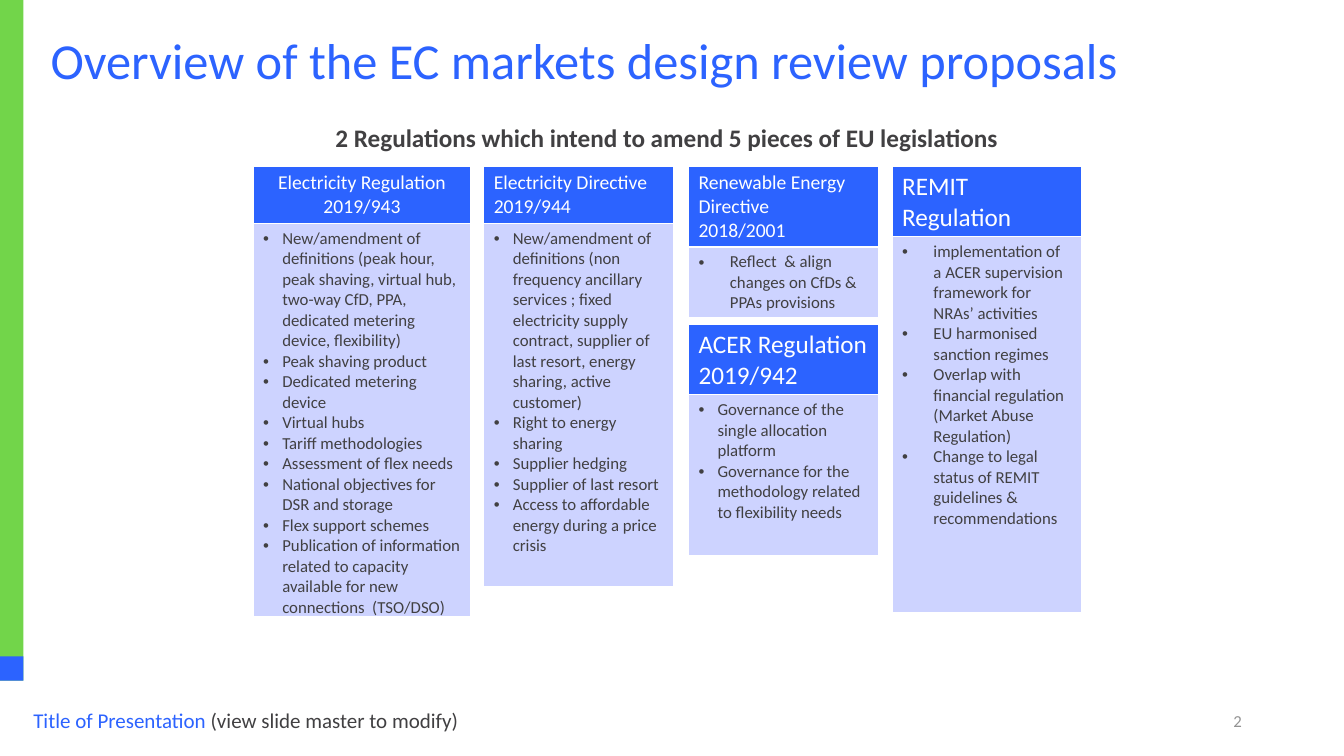
import pptx
import pptx.dml.color
import pptx.enum.shapes
import pptx.enum.text
import pptx.oxml.ns
import pptx.util
from lxml import etree
from pptx.util import Cm, Pt

ALIGN = pptx.enum.text.PP_ALIGN
ANCHOR = pptx.enum.text.MSO_ANCHOR
BLUE, GREEN, LILAC = "2C63FF", "72D54A", "CDD3FF"
DARK, GREY, WHITE = "414042", "939393", "FFFFFF"
TOP, NARROW = 4.19, 4.78
TIGHT, WIDE = 0.48, 0.79

# left, top, width, header height, body height, header size, header alignment,
# bullet indent, header lines, bullets
CARDS = [
    (6.38, TOP, 5.49, 1.42, 9.91, 14, ALIGN.CENTER, TIGHT,
     ["Electricity Regulation 2019/943"],
     ["New/amendment of definitions (peak hour, peak shaving, virtual hub, "
      "two-way CfD, PPA, dedicated metering device, flexibility)",
      "Peak shaving product",
      "Dedicated metering device",
      "Virtual hubs",
      "Tariff methodologies",
      "Assessment of flex needs",
      "National objectives for DSR and storage",
      "Flex support schemes",
      "Publication of information related to capacity available for new "
      "connections  (TSO/DSO)"]),
    (12.19, TOP, NARROW, 1.42, 9.15, 14, ALIGN.LEFT, TIGHT,
     ["Electricity Directive", "2019/944"],
     ["New/amendment of definitions (non frequency ancillary services ; fixed "
      "electricity supply contract, supplier of last resort, energy sharing, "
      "active customer)",
      "Right to energy sharing",
      "Supplier hedging",
      "Supplier of last resort",
      "Access to affordable energy during a price crisis"]),
    (17.35, TOP, NARROW, 2.03, 1.76, 14, ALIGN.LEFT, WIDE,
     ["Renewable Energy Directive", "2018/2001"],
     ["Reflect  & align changes on CfDs & PPAs provisions"]),
    (17.35, 8.17, NARROW, 1.76, 4.06, 18, ALIGN.LEFT, TIGHT,
     ["ACER Regulation", "2019/942"],
     ["Governance of the single allocation platform",
      "Governance for the methodology related to flexibility needs"]),
    (22.48, TOP, NARROW, 1.76, 9.47, 18, ALIGN.LEFT, WIDE,
     ["REMIT Regulation"],
     ["implementation of a ACER supervision framework for NRAs’ activities",
      "EU harmonised sanction regimes",
      "Overlap with financial regulation (Market Abuse Regulation)",
      "Change to legal status of REMIT guidelines & recommendations"]),
]


def rgb(value):
    return pptx.dml.color.RGBColor.from_string(value)


def paint(obj, color):
    obj.fill.solid()
    obj.fill.fore_color.rgb = rgb(color)


def format_run(r, size, color, bold=False):
    r.font.name = "Calibri"
    r.font.size = Pt(size)
    r.font.bold = bold
    r.font.color.rgb = rgb(color)


def add_bar(s, top, height, color):
    bar = s.shapes.add_shape(pptx.enum.shapes.MSO_SHAPE.RECTANGLE,
                             0, Cm(top), Cm(0.59), Cm(height))
    bar.shadow.inherit = False
    paint(bar, color)
    bar.line.fill.background()


def add_text(s, left, top, width, height, runs, size, align=ALIGN.LEFT,
             bold=False):
    """Add a one-paragraph text box from (text, colour) runs."""
    sp = s.shapes.add_textbox(Cm(left), Cm(top), Cm(width), Cm(height))
    tf = sp.text_frame
    tf.word_wrap = True
    p = tf.paragraphs[0]
    p.alignment = align
    for text, color in runs:
        r = p.add_run()
        r.text = text
        format_run(r, size, color, bold)
    return tf


def set_bullet(p, indent):
    pPr = p._p.get_or_add_pPr()
    pPr.set("marL", str(Cm(indent)))
    pPr.set("indent", str(-Cm(indent)))
    font = etree.SubElement(pPr, pptx.oxml.ns.qn("a:buFont"))
    font.set("typeface", "Arial")
    etree.SubElement(pPr, pptx.oxml.ns.qn("a:buChar")).set("char", "•")


def set_borders(cell, color):
    qn = pptx.oxml.ns.qn
    tcPr = cell._tc.get_or_add_tcPr()
    for side in ("a:lnL", "a:lnR", "a:lnT", "a:lnB"):
        ln = etree.SubElement(tcPr, qn(side), w=str(Pt(1)))
        fill = etree.SubElement(ln, qn("a:solidFill"))
        etree.SubElement(fill, qn("a:srgbClr"), val=color)


def fill_cell(cell, lines, size, color, background, align=ALIGN.LEFT,
              indent=None):
    set_borders(cell, WHITE)
    paint(cell, background)
    cell.text_frame.text = "\n".join(lines)
    for p in cell.text_frame.paragraphs:
        p.alignment = align
        if indent:
            set_bullet(p, indent)
        for r in p.runs:
            format_run(r, size, color)


def add_card(s, left, top, width, head_height, body_height, head_size,
             head_align, indent, head, bullets):
    """Add a two-row table: a blue header above a bulleted body."""
    table = s.shapes.add_table(2, 1, Cm(left), Cm(top), Cm(width),
                               Cm(head_height + body_height)).table
    table.horz_banding = False
    table.rows[0].height = Cm(head_height)
    table.rows[1].height = Cm(body_height)
    fill_cell(table.cell(0, 0), head, head_size, WHITE, BLUE, head_align)
    fill_cell(table.cell(1, 0), bullets, 12, DARK, LILAC, indent=indent)


def set_title(s, text):
    title = s.shapes.title
    title.left, title.top = Cm(1.02), Cm(-0.25)
    title.width, title.height = Cm(29.21), Cm(3.68)
    tf = title.text_frame
    tf.text = text
    tf.auto_size = pptx.enum.text.MSO_AUTO_SIZE.NONE
    tf.vertical_anchor = ANCHOR.MIDDLE
    p = tf.paragraphs[0]
    p.alignment = ALIGN.LEFT
    p.line_spacing = 0.9
    format_run(p.runs[0], 36, BLUE)


def main():
    prs = pptx.Presentation()
    prs.slide_width, prs.slide_height = Cm(33.87), Cm(19.05)
    s = prs.slides.add_slide(prs.slide_layouts[5])

    add_bar(s, 0, 17.15, GREEN)
    add_bar(s, 16.54, 0.61, BLUE)
    footer = add_text(s, 0.59, 17.78, 14.5, 1.04,
                      [("Title of Presentation", BLUE),
                       (" (view slide master to modify)", DARK)], 15)
    footer.paragraphs[0].line_spacing = 0.9

    set_title(s, "Overview of the EC markets design review proposals")
    number = add_text(s, 23.93, 17.65, 7.62, 1.02, [("2", GREY)], 12,
                      ALIGN.RIGHT)
    number.vertical_anchor = ANCHOR.MIDDLE
    add_text(s, 5.26, 2.97, 23.09, 1.02,
             [("2 Regulations which intend to amend 5 pieces of EU legislations",
               DARK)], 18, ALIGN.CENTER, bold=True)
    for card in CARDS:
        add_card(s, *card)

    prs.save("out.pptx")


if __name__ == "__main__":
    main()
